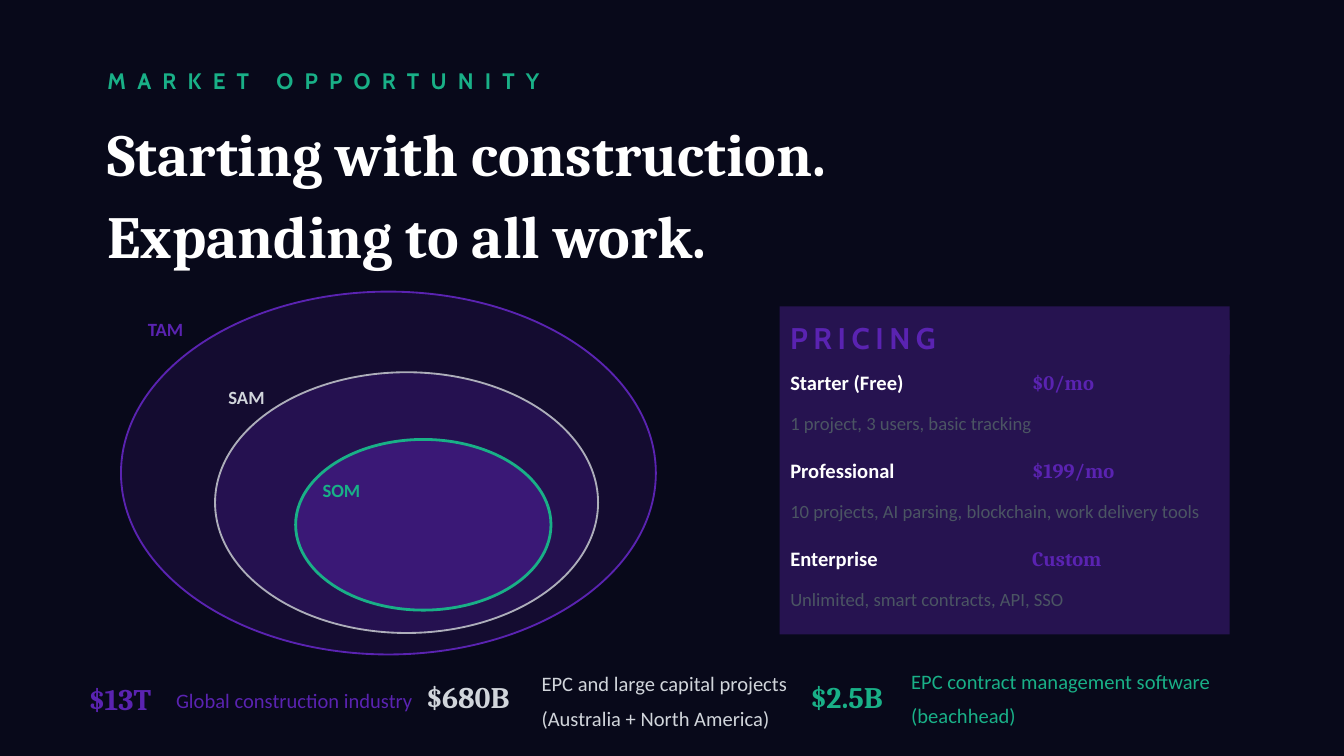
from lxml import etree
from pptx import Presentation
from pptx.dml.color import RGBColor
from pptx.enum.shapes import MSO_SHAPE
from pptx.enum.text import MSO_ANCHOR, MSO_AUTO_SIZE, PP_ALIGN
from pptx.oxml.ns import qn
from pptx.util import Pt

PX = 9144  # 100 px to the inch
SLIDE_WIDTH = 1000
OVAL, RECT = MSO_SHAPE.OVAL, MSO_SHAPE.RECTANGLE
MIDDLE, LEFT, NO_FIT = MSO_ANCHOR.MIDDLE, PP_ALIGN.LEFT, MSO_AUTO_SIZE.NONE
LABEL_FONT, BODY_FONT, HEAD_FONT = "Cabin", "Calibri", "Cambria"

NIGHT = RGBColor(0x08, 0x09, 0x1A)
PANEL = RGBColor(0x26, 0x13, 0x50)
PURPLE = RGBColor(0x5A, 0x23, 0xB1)
GREEN = RGBColor(0x19, 0xB0, 0x87)
SILVER = RGBColor(0xAD, 0xAE, 0xBA)
LIGHT = RGBColor(0xD1, 0xD5, 0xDB)
SLATE = RGBColor(0x4B, 0x55, 0x63)
WHITE = RGBColor(0xFF, 0xFF, 0xFF)

# Content
KICKER = "MARKET OPPORTUNITY"
TITLE = ["Starting with construction.", "Expanding to all work."]
# ellipse box, opacity %, outline, outline width, label, label position, label colour
MARKETS = [
    ((90, 217, 398, 270), 15, PURPLE, 1, "TAM", (110, 232), PURPLE),
    ((160, 277, 285, 194), 25, SILVER, 1, "SAM", (170, 283), LIGHT),
    ((220, 327, 190, 127), 40, GREEN, 1.5, "SOM", (240, 352), GREEN),
]
# amount, amount box, description lines, description box, colour
STATS = [
    ("$13T", (66, 499, 200, 41),
     ["Global construction industry"], (131, 504, 185, 27), PURPLE),
    ("$680B", (317, 498, 80, 41),
     ["EPC and large capital projects", "(Australia + North America)"],
     (403, 493, 230, 50), LIGHT),
    ("$2.5B", (603, 498, 74, 41),
     ["EPC contract management software (beachhead)"],
     (678, 491, 263, 50), GREEN),
]
PLANS = [
    ("Starter (Free)", "$0/mo", "1 project, 3 users, basic tracking"),
    ("Professional", "$199/mo",
     "10 projects, AI parsing, blockchain, work delivery tools"),
    ("Enterprise", "Custom", "Unlimited, smart contracts, API, SSO"),
]
PLAN_TOP, PLAN_STEP = 274, 65.5
PLAN_LEFT, PRICE_LEFT = 588, 768


def emu(box):
    return [round(v * PX) for v in box]


def write(sp, lines, size, font, color, bold=False, spacing=None, tracking=0):
    tf = sp.text_frame
    tf.word_wrap = True
    tf.auto_size = NO_FIT
    tf.vertical_anchor = MIDDLE
    tf.margin_left = tf.margin_right = tf.margin_top = tf.margin_bottom = 0
    for i, line in enumerate(lines):
        p = tf.paragraphs[0] if i == 0 else tf.add_paragraph()
        r = p.add_run()
        r.text = line
        p.alignment = LEFT
        if spacing:
            p.line_spacing = spacing
        p.font.size = Pt(size)
        p.font.name = font
        p.font.bold = bold
        p.font.color.rgb = color
        if tracking:
            r._r.get_or_add_rPr().set("spc", str(tracking * 100))


def add_text(s, box, *args, **style):
    write(s.shapes.add_textbox(*emu(box)), *args, **style)


def add_block(s, kind, box, fill):
    sp = s.shapes.add_shape(kind, *emu(box))
    sp.shadow.inherit = False
    sp.fill.solid()
    sp.fill.fore_color.rgb = fill
    sp.line.fill.background()
    return sp


def add_cell(s, box, text, *args, **style):
    write(add_block(s, RECT, box, PANEL), [text], *args, **style)


prs = Presentation()
prs.slide_width, prs.slide_height = emu((SLIDE_WIDTH, SLIDE_WIDTH * 9 / 16))
s = prs.slides.add_slide(prs.slide_layouts[5])
s.background.fill.solid()
s.background.fill.fore_color.rgb = NIGHT

# Heading
add_text(s, (80, 40, 500, 40), [KICKER], 12, LABEL_FONT, GREEN, bold=True, tracking=6)
title = s.shapes.title
title.left, title.top, title.width, title.height = emu((80, 90, 800, 100))
write(title, TITLE, 32, HEAD_FONT, WHITE, bold=True, spacing=1.15)

# Nested market ellipses
for box, opacity, outline, width, label, (x, y), color in MARKETS:
    sp = add_block(s, OVAL, box, PURPLE)
    clr = sp.fill._xPr.find(qn("a:solidFill")).find(qn("a:srgbClr"))
    etree.SubElement(clr, qn("a:alpha")).set("val", str(opacity * 1000))
    sp.line.color.rgb = outline
    sp.line.width = Pt(width)
    add_text(s, (x, y, 95, 25), [label], 10, BODY_FONT, color, bold=True)

# Market sizes
for amount, amount_box, lines, lines_box, color in STATS:
    add_text(s, amount_box, [amount], 16, HEAD_FONT, color, bold=True)
    add_text(s, lines_box, lines, 11, BODY_FONT, color, spacing=1.4)

# Pricing panel
add_block(s, RECT, (580, 228, 335, 244), PANEL)
add_cell(s, (PLAN_LEFT, 238, 327, 26), "PRICING", 16, LABEL_FONT, PURPLE,
         bold=True, tracking=3)
for i, (plan, price, detail) in enumerate(PLANS):
    y = PLAN_TOP + i * PLAN_STEP
    add_cell(s, (PLAN_LEFT, y, 171, 21), plan, 11, BODY_FONT, WHITE, bold=True)
    add_cell(s, (PRICE_LEFT, y, 142, 21), price, 11, HEAD_FONT, PURPLE, bold=True)
    add_cell(s, (PLAN_LEFT, y + 28, 322, 26), detail, 10, BODY_FONT, SLATE)

prs.save("out.pptx")
